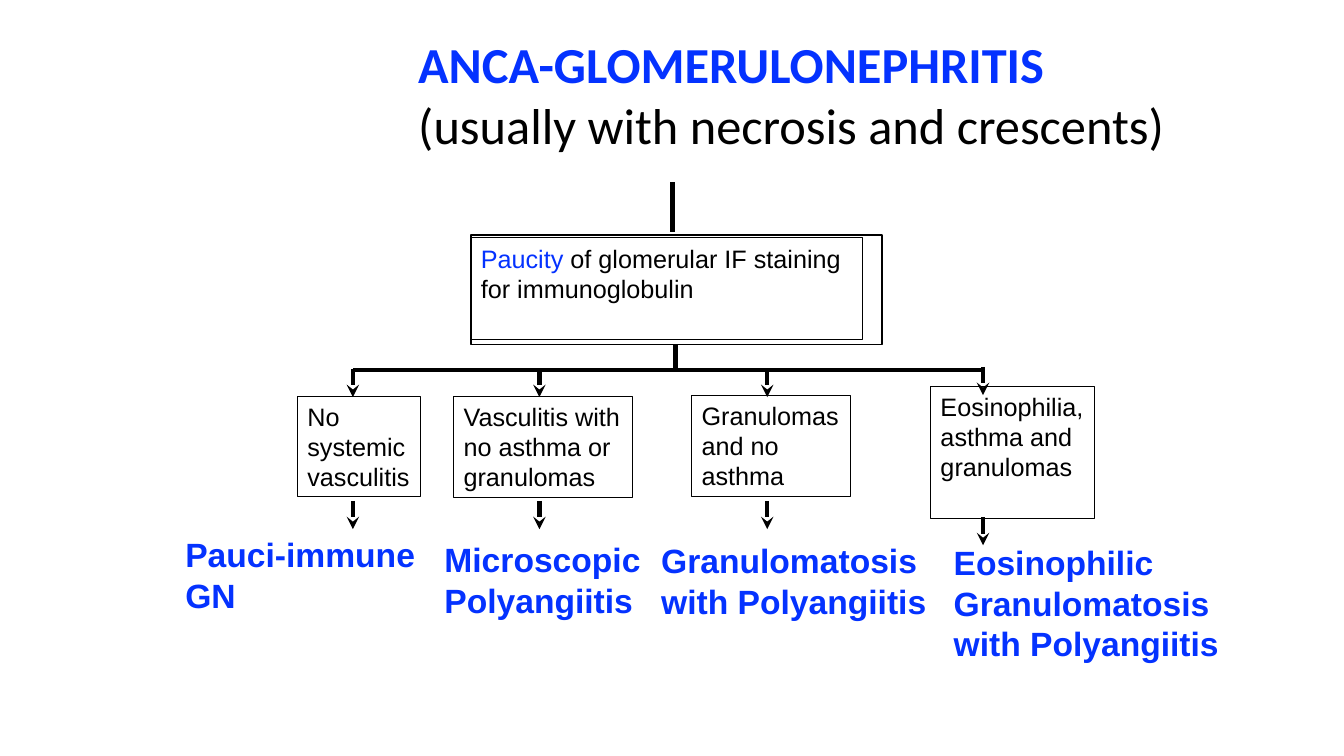
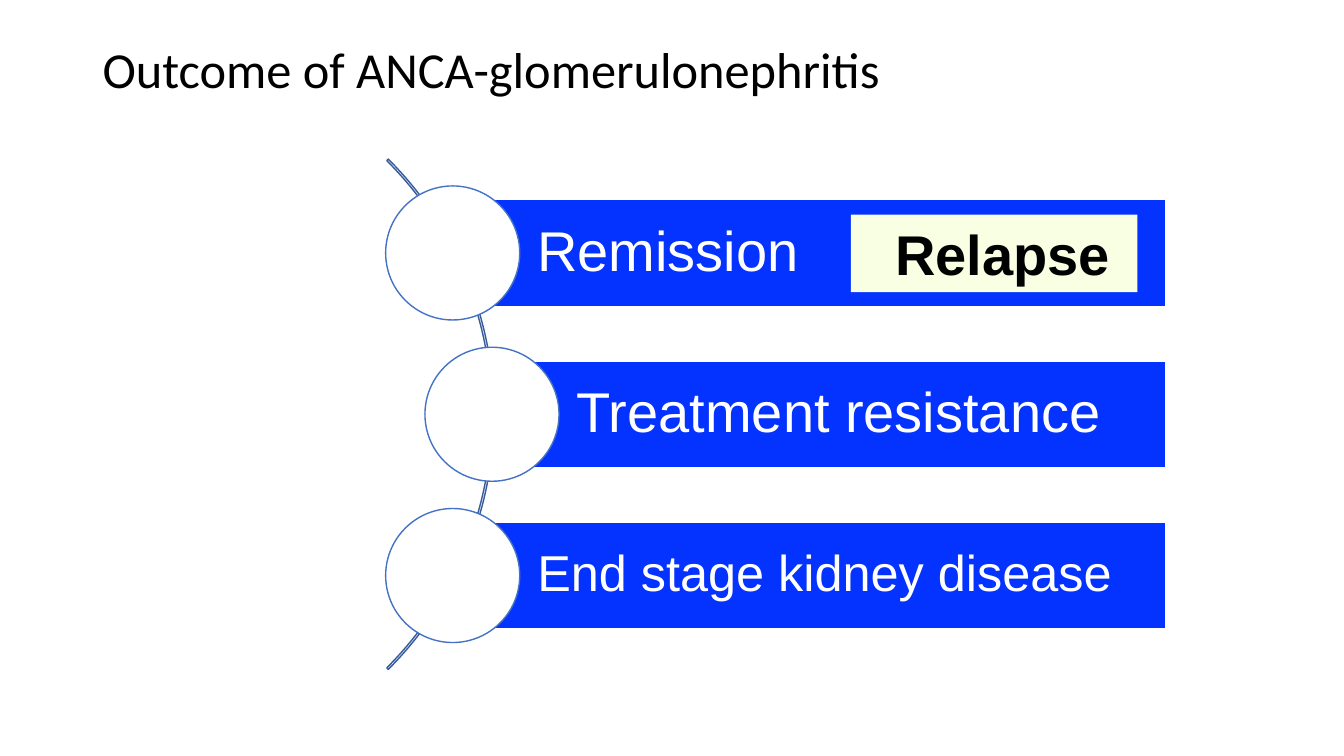
"""Build two slides on ANCA-glomerulonephritis: its classification and its outcome."""
from lxml import etree
from pptx import Presentation
from pptx.dml.color import RGBColor
from pptx.enum.shapes import MSO_CONNECTOR, MSO_SHAPE
from pptx.enum.text import MSO_ANCHOR, MSO_AUTO_SIZE, PP_ALIGN
from pptx.oxml.ns import qn
from pptx.util import Inches, Pt

BLUE = RGBColor(0x04, 0x32, 0xFF)
BLACK = RGBColor(0x00, 0x00, 0x00)
WHITE = RGBColor(0xFF, 0xFF, 0xFF)
CREAM = RGBColor(0xF9, 0xFF, 0xE3)
ARC_BLUE = RGBColor(0x36, 0x5B, 0x9D)
RING_BLUE = RGBColor(0x44, 0x72, 0xC4)

RECTANGLE = MSO_SHAPE.RECTANGLE
OVAL = MSO_SHAPE.OVAL
BLOCK_ARC = MSO_SHAPE.BLOCK_ARC
STRAIGHT = MSO_CONNECTOR.STRAIGHT
TOP = MSO_ANCHOR.TOP
MIDDLE = MSO_ANCHOR.MIDDLE
LEFT = PP_ALIGN.LEFT
FIT_SHAPE = MSO_AUTO_SIZE.SHAPE_TO_FIT_TEXT

TITLE = {"name": "Calibri", "size": Pt(36), "bold": False}
TITLE_STRONG = {**TITLE, "bold": True}
CRITERION = {"name": "Arial", "size": Pt(18)}
DIAGNOSIS = {"name": "Arial", "size": Pt(24), "bold": True}
OUTCOME = {"name": "Arial", "size": Pt(40)}
OUTCOME_SMALL = {**OUTCOME, "size": Pt(36)}
RELAPSE = {**OUTCOME, "bold": True}

FITTED = {"word_wrap": False, "auto_size": FIT_SHAPE, "vertical_anchor": TOP}
WRAPPED = {"word_wrap": True, "vertical_anchor": TOP}
CENTRED = {"word_wrap": True, "vertical_anchor": MIDDLE}

ARROW_LENGTH = 0.28
BRANCH_Y = 3.67

BRANCHES = [
    (3.5, 3.66, 4.97, (2.95, 3.93, 1.22, 1), ["No", "systemic", "vasculitis"],
     (1.74, 5.25, 2.5, 0.91), ["Pauci-immune", "GN"], FITTED),
    (5.35, 3.66, 4.97, (4.5, 3.93, 1.77, 1.01),
     ["Vasculitis with", "no asthma or", "granulomas"],
     (4.31, 5.3, 2.17, 0.91), ["Microscopic", "Polyangiitis"], FITTED),
    (7.61, 3.66, 4.97, (6.86, 3.92, 1.58, 1.01),
     ["Granulomas", "and no", "asthma"],
     (6.46, 5.31, 2.85, 0.91), ["Granulomatosis", "with Polyangiitis"], FITTED),
    (9.75, 3.64, 5.13, (9.23, 3.83, 1.63, 1.31),
     ["Eosinophilia,", "asthma and", "granulomas"],
     (9.36, 5.33, 3.32, 1.31),
     ["Eosinophilic Granulomatosis with Polyangiitis"], WRAPPED),
]

OUTCOMES = [
    (4.49, "Remission", OUTCOME),
    (4.88, "Treatment resistance", OUTCOME),
    (4.49, "End stage kidney disease", OUTCOME_SMALL),
]
ARC_SIZE = 7.16
ARC_LEFT = -2.26
MIDDLE_Y = 4.11
ROW_STEP = 1.6
BAR_HEIGHT = 1.06
BAR_RIGHT = 11.56
RING_SIZE = 1.33


def apply_format(target, values):
    """Set each named attribute on the target."""
    for name, value in values.items():
        setattr(target, name, value)


def plain(lines, font_format, color):
    """Turn each line into a paragraph of a single run."""
    return [[(line, font_format, color)] for line in lines]


def write(shape, paragraphs, frame_format, line_spacing=None):
    """Fill a shape with paragraphs of (text, font format, colour) runs."""
    frame = shape.text_frame
    apply_format(frame, frame_format)
    for index, runs in enumerate(paragraphs):
        paragraph = frame.add_paragraph() if index else frame.paragraphs[0]
        paragraph.alignment = LEFT
        paragraph.line_spacing = line_spacing
        for text, font_format, color in runs:
            run = paragraph.add_run()
            run.text = text
            apply_format(run.font, font_format)
            run.font.color.rgb = color


def add_text(slide, box, paragraphs, frame_format, line_spacing=None):
    """Add a text box."""
    label = slide.shapes.add_textbox(*map(Inches, box))
    write(label, paragraphs, frame_format, line_spacing)


def add_figure(slide, kind, box, fill=None, line=None, width=1):
    """Add a flat preset shape."""
    figure = slide.shapes.add_shape(kind, *map(Inches, box))
    figure.shadow.inherit = False
    if fill is None:
        figure.fill.background()
    else:
        figure.fill.solid()
        figure.fill.fore_color.rgb = fill
    if line is None:
        figure.line.fill.background()
    else:
        figure.line.color.rgb = line
        figure.line.width = Pt(width)
    return figure


def add_line(slide, start, end, arrow=False):
    """Add a thick black line, with an arrowhead at its end if asked."""
    link = slide.shapes.add_connector(STRAIGHT, *map(Inches, start + end))
    link.line.color.rgb = BLACK
    link.line.width = Pt(3)
    if arrow:
        outline = link.line._get_or_add_ln()
        etree.SubElement(outline, qn("a:tailEnd"), type="stealth")
    etree.SubElement(link._element.spPr, qn("a:effectLst"))


def add_branch(slide, x, upper, lower, box, criteria, label_box, diagnosis, label_format):
    """Add one criterion box with its diagnosis and both arrows."""
    criterion = add_figure(slide, RECTANGLE, box, line=BLACK, width=0.75)
    write(criterion, plain(criteria, CRITERION, BLACK), FITTED)
    add_text(slide, label_box, plain(diagnosis, DIAGNOSIS, BLUE), label_format)
    for start in (upper, lower):
        add_line(slide, (x, start), (x, start + ARROW_LENGTH), arrow=True)


def build_classification(slide):
    """Draw the tree from staining to the four diagnoses."""
    add_text(slide, (4.05, 0.28, 7.67, 1.31), [
        [("ANCA-GLOMERULONEPHRITIS", TITLE_STRONG, BLUE)],
        [("(usually with necrosis and crescents)", TITLE, BLACK)],
    ], FITTED)
    staining = add_figure(slide, RECTANGLE, (4.67, 2.36, 3.88, 1.01), line=BLACK, width=0.75)
    write(staining, [
        [("Paucity ", CRITERION, BLUE), ("of glomerular IF staining", CRITERION, BLACK)],
        [("for immunoglobulin", CRITERION, BLACK)],
    ], FITTED)
    add_figure(slide, RECTANGLE, (4.67, 2.33, 4.08, 1.09), line=BLACK)
    for branch in BRANCHES:
        add_branch(slide, *branch)
    add_line(slide, (BRANCHES[-1][0], BRANCH_Y), (BRANCHES[0][0], BRANCH_Y))
    add_line(slide, (6.7, 3.42), (6.7, 3.65))
    add_line(slide, (6.67, 1.81), (6.67, 2.3))


def add_outcome(slide, row, left, text, font_format):
    """Add one outcome bar with the ring at its left end."""
    center_y = MIDDLE_Y + (row - 1) * ROW_STEP
    bar = add_figure(
        slide, RECTANGLE,
        (left, center_y - BAR_HEIGHT / 2, BAR_RIGHT - left, BAR_HEIGHT), BLUE, WHITE)
    write(bar, plain([text], font_format, WHITE),
          {**CENTRED, "margin_left": Inches(0.84)}, 0.9)
    half = RING_SIZE / 2
    add_figure(slide, OVAL, (left - half, center_y - half, RING_SIZE, RING_SIZE),
               WHITE, RING_BLUE)


def build_outcome(slide):
    """Draw the three outcomes along an arc."""
    add_text(slide, (0.92, 0.4, 11.5, 1.45),
             plain(["Outcome of ANCA-glomerulonephritis"], TITLE, BLACK), WRAPPED, 0.9)
    arc = add_figure(slide, BLOCK_ARC,
                     (ARC_LEFT, MIDDLE_Y - ARC_SIZE / 2, ARC_SIZE, ARC_SIZE), line=ARC_BLUE)
    for index, value in enumerate((189, 27, 0.003)):
        arc.adjustments[index] = value
    for row, outcome in enumerate(OUTCOMES):
        add_outcome(slide, row, *outcome)
    relapse = add_figure(slide, RECTANGLE, (8.44, 2.13, 2.84, 0.77), CREAM)
    write(relapse, plain(["Relapse"], RELAPSE, BLACK),
          {**CENTRED, "margin_left": Inches(0.44)})


def main():
    """Build and save the presentation."""
    deck = Presentation()
    deck.slide_width, deck.slide_height = Inches(13.33), Inches(7.5)
    for build in (build_classification, build_outcome):
        build(deck.slides.add_slide(deck.slide_layouts[6]))
    deck.save("out.pptx")


if __name__ == "__main__":
    main()
